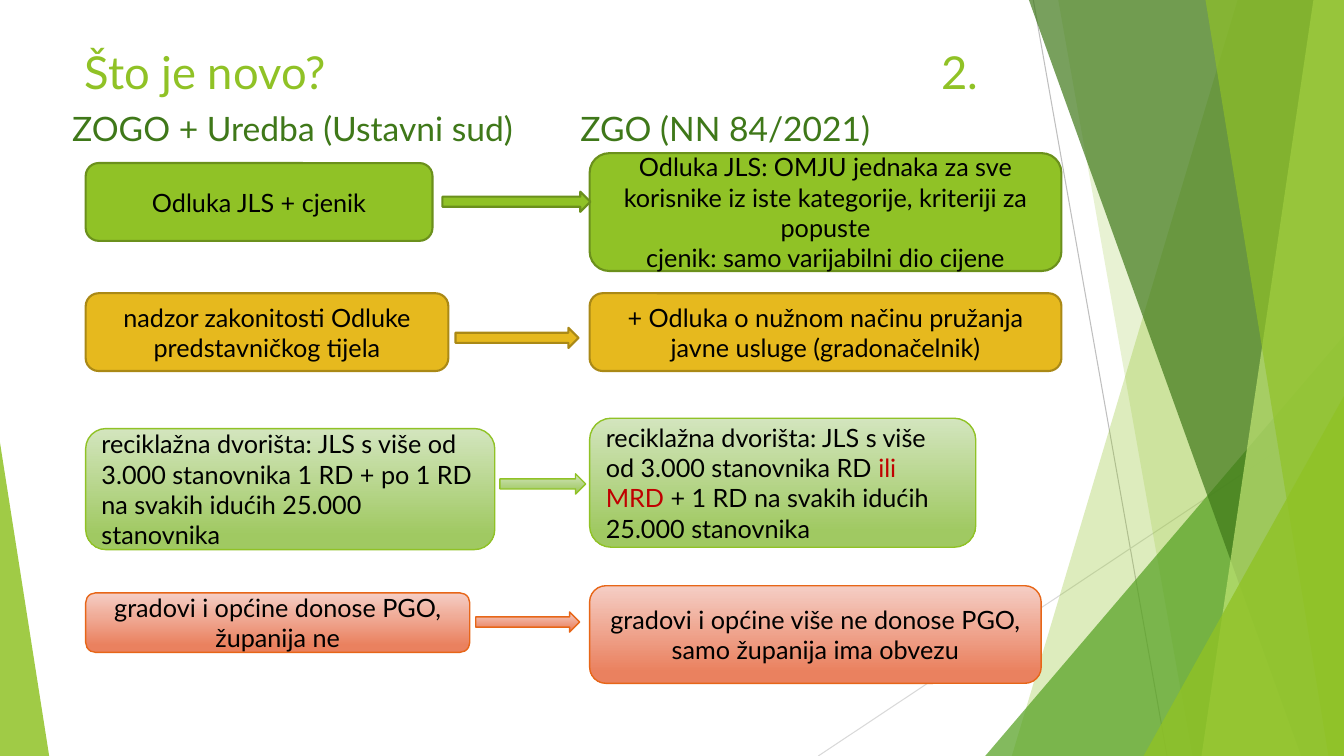
from dataclasses import dataclass

from lxml.etree import SubElement
from pptx import Presentation
from pptx.dml.color import RGBColor
from pptx.enum.shapes import MSO_CONNECTOR as Link, MSO_SHAPE as Preset
from pptx.enum.text import MSO_ANCHOR as Anchor, PP_ALIGN as Align
from pptx.oxml.ns import qn
from pptx.util import Cm, Pt


@dataclass(frozen=True)
class Theme:
    font: str = "Lato"
    title_size: float = 32.4
    heading_size: float = 24
    text_size: float = 18
    lime: str = "90C226"
    green: str = "54A021"
    forest: str = "3F7819"
    pale: str = "C0E474"
    black: str = "000000"
    red: str = "C00000"
    rule_dark: str = "BFBFBF"
    rule_light: str = "D9D9D9"
    # Row styles: fill colours (two make a gradient), line colour, line width
    lime_row: tuple = (("90C226",), "6B901C", 1.5)
    gold_row: tuple = (("E6B91E",), "AA8916", 1.5)
    leaf_row: tuple = (("D3E5BE", "A0C962"), "90C226", 1)
    coral_row: tuple = (("F5CEC5", "EA815F"), "E76618", 1)


THEME = Theme()
PAGE_W, PAGE_H = 33.87, 19.05
LEFT_X, RIGHT_X = 2.16, 14.86
ARROW_H = 0.51


def rgb(code):
    return RGBColor.from_string(code)


def apply(target, values):
    for name, value in values.items():
        setattr(target, name, value)


# Text
def write(shape, paras, size, align=Align.LEFT, anchor=Anchor.MIDDLE):
    """Each paragraph is a list of (text, colour) spans."""
    frame = shape.text_frame
    apply(frame, {"word_wrap": True, "vertical_anchor": anchor})
    for index, spans in enumerate(paras):
        para = frame.paragraphs[0] if index == 0 else frame.add_paragraph()
        para.alignment = align
        for text, colour in spans:
            span = para.add_run()
            span.text = text
            apply(span.font, {"name": THEME.font, "size": Pt(size)})
            span.font.color.rgb = rgb(colour)


def add_label(page, area, text, size, colour, anchor):
    box = page.shapes.add_textbox(*map(Cm, area))
    write(box, [[(text, colour)]], size, anchor=anchor)
    return box


def add_tab_stop(box, position):
    properties = box.text_frame.paragraphs[0]._p.get_or_add_pPr()
    stops = SubElement(properties, qn("a:tabLst"))
    SubElement(stops, qn("a:tab"), pos=str(Cm(position)), algn="l")


# Background facets
def tint(shape, colour, opacity):
    shape.shadow.inherit = False
    shape.fill.solid()
    shape.fill.fore_color.rgb = rgb(colour)
    shape.line.fill.background()
    code = shape._element.spPr.find(".//" + qn("a:srgbClr"))
    SubElement(code, qn("a:alpha"), val=str(opacity * 1000))


def add_rule(page, start, end, colour):
    rule = page.shapes.add_connector(Link.STRAIGHT, *map(Cm, start + end))
    rule.line.color.rgb = rgb(colour)
    rule.line.width = Pt(0.75)
    SubElement(rule._element.spPr, qn("a:effectLst"))


def add_band(page, top_x, bottom_x, colour, opacity):
    """A facet from a slanted left edge to the right edge of the page."""
    outline = page.shapes.build_freeform(Cm(top_x), 0)
    corners = [(PAGE_W, 0), (PAGE_W, PAGE_H), (bottom_x, PAGE_H)]
    outline.add_line_segments([(Cm(x), Cm(y)) for x, y in corners])
    tint(outline.convert_to_shape(), colour, opacity)


def add_wedge(page, left, width, height, peak, colour, opacity):
    """A triangle standing on the bottom edge of the page."""
    area = (left, PAGE_H - height, width, height)
    wedge = page.shapes.add_shape(Preset.ISOSCELES_TRIANGLE, *map(Cm, area))
    wedge.adjustments[0] = peak
    tint(wedge, colour, opacity)


def add_background(page):
    add_rule(page, (26.04, 0), (29.41, PAGE_H), THEME.rule_dark)
    add_rule(page, (PAGE_W, 10.24), (20.62, PAGE_H), THEME.rule_light)
    add_band(page, 31.19, 25.5, THEME.lime, 30)
    add_band(page, 26.67, 30.05, THEME.lime, 20)
    add_wedge(page, 24.83, 9.04, 10.59, 1, THEME.green, 72)
    add_band(page, 25.93, 32.79, THEME.forest, 70)
    add_band(page, 33.1, 30.28, THEME.pale, 70)
    add_band(page, 30.38, 33.48, THEME.lime, 65)
    add_wedge(page, 28.82, 5.05, 9.07, 1, THEME.lime, 80)
    add_wedge(page, 0, 1.24, 7.9, 0, THEME.lime, 85)


# Comparison rows
def add_styled(page, preset, area, style):
    colours, line_colour, line_width = style
    shape = page.shapes.add_shape(preset, *map(Cm, area))
    shape.shadow.inherit = False
    if len(colours) == 1:
        shape.fill.solid()
        shape.fill.fore_color.rgb = rgb(colours[0])
    else:
        shape.fill.gradient()
        shape.fill.gradient_angle = 270
        for stop, colour, place in zip(shape.fill.gradient_stops, colours, (0, 0.88)):
            stop.color.rgb = rgb(colour)
            stop.position = place
    shape.line.color.rgb = rgb(line_colour)
    shape.line.width = Pt(line_width)
    return shape


def add_panel(page, left, extent, paras, style, align):
    top, width, height = extent
    panel = add_styled(page, Preset.ROUNDED_RECTANGLE, (left, top, width, height), style)
    write(panel, paras, THEME.text_size, align)


def plain(*lines):
    return [[(line, THEME.black)] for line in lines]


# Style, alignment, old panel (top, width, height), old text,
# new panel (top, width, height), new text, arrow (left, top, width)
ROWS = [
    (THEME.lime_row, Align.CENTER,
     (4.11, 8.74, 1.96), plain("Odluka JLS + cjenik"),
     (3.86, 11.89, 2.97),
     plain("Odluka JLS: OMJU jednaka za sve korisnike iz iste kategorije, "
           "kriteriji za popuste",
           "cjenik: samo varijabilni dio cijene"),
     (11.15, 4.83, 3.73)),
    (THEME.gold_row, Align.CENTER,
     (7.39, 9.14, 1.96), plain("nadzor zakonitosti Odluke predstavničkog tijela"),
     (7.39, 11.89, 1.96),
     plain("+ Odluka o nužnom načinu pružanja javne usluge (gradonačelnik)"),
     (11.48, 8.26, 3.1)),
    (THEME.leaf_row, Align.LEFT,
     (10.8, 10.31, 3.05),
     plain("reciklažna dvorišta: JLS s više od 3.000 stanovnika 1 RD + po 1 RD "
           "na svakih idućih 25.000 stanovnika"),
     (10.54, 9.73, 3.25),
     [[("reciklažna dvorišta: JLS s više od 3.000 stanovnika RD ", THEME.black),
       ("ili MRD ", THEME.red),
       ("+ 1 RD na svakih idućih 25.000 stanovnika", THEME.black)]],
     (12.6, 11.94, 2.16)),
    (THEME.coral_row, Align.CENTER,
     (14.94, 9.68, 1.5), plain("gradovi i općine donose PGO, županija ne"),
     (14.76, 11.38, 2.46),
     plain("gradovi i općine više ne donose PGO, samo županija ima obvezu"),
     (11.99, 15.42, 2.62)),
]


def main():
    deck = Presentation()
    apply(deck, {"slide_width": Cm(PAGE_W), "slide_height": Cm(PAGE_H)})
    page = deck.slides.add_slide(deck.slide_layouts[6])
    add_background(page)

    # Title and column headings
    title = add_label(page, (1.88, 0.99, 23.88, 1.6), "Što je novo?\t2.",
                      THEME.title_size, THEME.lime, Anchor.TOP)
    add_tab_stop(title, 21.59)
    for left, heading in ((1.57, "ZOGO + Uredba (Ustavni sud)"),
                          (14.38, "ZGO (NN 84/2021)")):
        add_label(page, (left, 2.26, 11.63, 1.6), heading,
                  THEME.heading_size, THEME.forest, Anchor.BOTTOM)

    # Old rule, new rule and the arrow between them
    for style, align, old, old_text, new, new_text, arrow in ROWS:
        add_panel(page, LEFT_X, old, old_text, style, align)
        add_panel(page, RIGHT_X, new, new_text, style, align)
        add_styled(page, Preset.RIGHT_ARROW, (*arrow, ARROW_H), style)

    deck.save("out.pptx")


if __name__ == "__main__":
    main()
